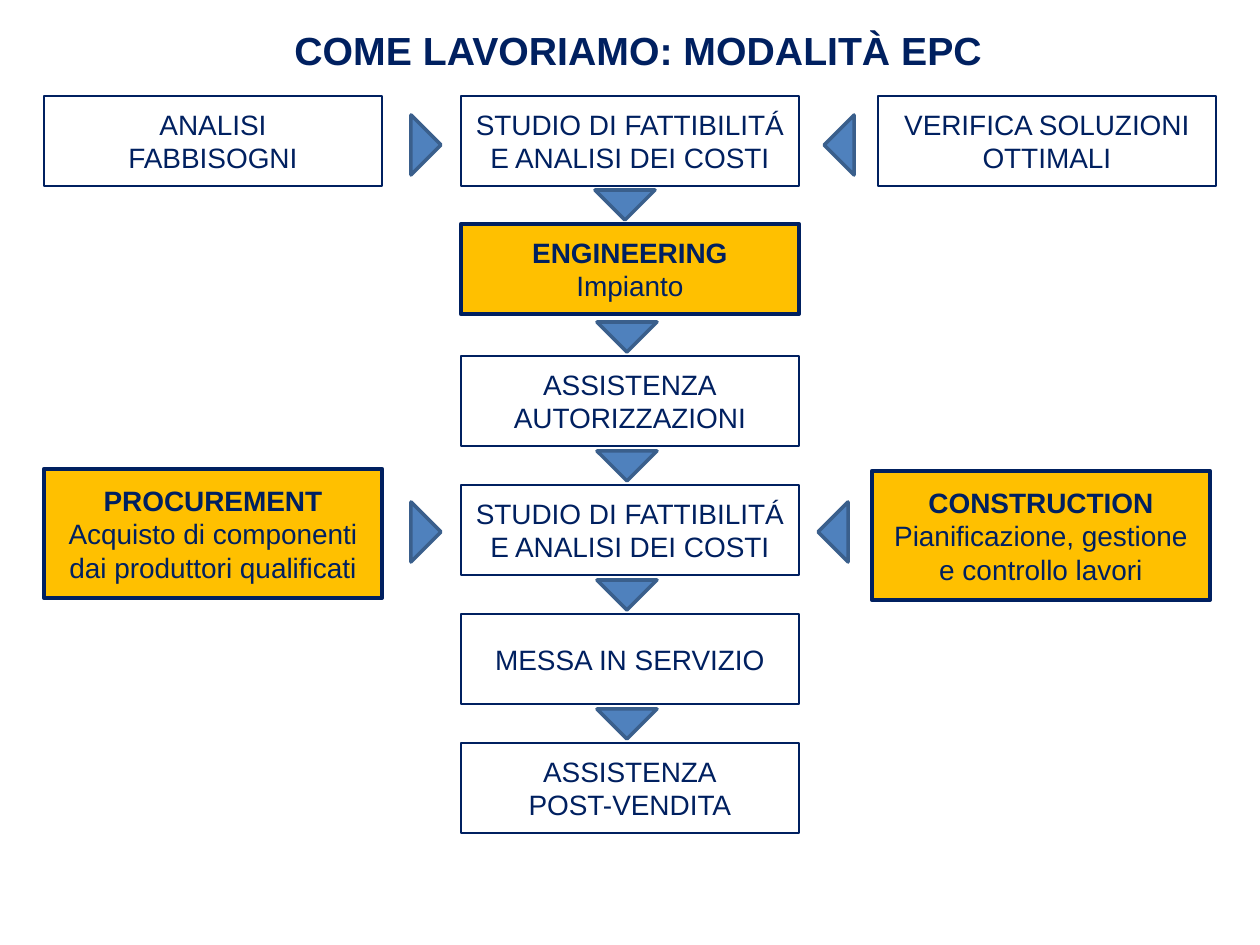
import dataclasses

import pptx
import pptx.dml.color
import pptx.enum.shapes
import pptx.enum.text
import pptx.util

PX = 914400 / 126
SHAPE = pptx.enum.shapes.MSO_SHAPE
ALIGN = pptx.enum.text.PP_ALIGN
ANCHOR = pptx.enum.text.MSO_ANCHOR


@dataclasses.dataclass(frozen=True)
class Theme:
    """Colours, type sizes and line widths of the slide."""
    navy: str = "002060"
    gold: str = "FFC000"
    arrow_fill: str = "4F81BD"
    arrow_line: str = "3A5F8C"
    font: str = "Arial"
    title_size: float = 22.4
    step_size: float = 16
    step_line: float = 1.5
    key_line: float = 2.5
    arrow_width: float = 2


THEME = Theme()


def emu(px):
    """Turn px into EMU."""
    return pptx.util.Emu(round(px * PX))


def rgb(colour):
    """Turn a hex string into a colour."""
    return pptx.dml.color.RGBColor.from_string(colour)


def write(frame, text, size, align=ALIGN.CENTER, anchor=ANCHOR.MIDDLE, bold_first=False):
    """Write each line of text as one paragraph."""
    frame.word_wrap = True
    frame.vertical_anchor = anchor
    for index, line in enumerate(text.split("\n")):
        paragraph = frame.add_paragraph() if index else frame.paragraphs[0]
        paragraph.alignment = align
        run = paragraph.add_run()
        run.text = line
        run.font.name = THEME.font
        run.font.size = pptx.util.Pt(size)
        run.font.bold = bold_first and index == 0
        run.font.color.rgb = rgb(THEME.navy)


def add_outlined(slide, kind, box, fill, line, width):
    """Add a preset shape with its fill and outline."""
    shape = slide.shapes.add_shape(kind, *map(emu, box))
    shape.shadow.inherit = False
    if fill:
        shape.fill.solid()
        shape.fill.fore_color.rgb = rgb(fill)
    else:
        shape.fill.background()
    shape.line.color.rgb = rgb(line)
    shape.line.width = pptx.util.Pt(width)
    return shape


def add_step(slide, box, text, key=False):
    """Add a process step, gold with a bold heading when it is a key phase."""
    step = add_outlined(slide, SHAPE.RECTANGLE, box, THEME.gold if key else None,
                        THEME.navy, THEME.key_line if key else THEME.step_line)
    write(step.text_frame, text, THEME.step_size, bold_first=key)


def add_arrow(slide, centre_x, centre_y, rotation):
    """Add a triangular arrow turned about its centre."""
    width, height = 60, 30
    box = (centre_x - width / 2, centre_y - height / 2, width, height)
    arrow = add_outlined(slide, SHAPE.ISOSCELES_TRIANGLE, box, THEME.arrow_fill,
                         THEME.arrow_line, THEME.arrow_width)
    arrow.rotation = rotation


def add_title(slide, box):
    """Add the slide title."""
    frame = slide.shapes.add_textbox(*map(emu, box)).text_frame
    frame.margin_top = emu(10)
    write(frame, "COME LAVORIAMO: MODALITÀ EPC", THEME.title_size,
          align=ALIGN.LEFT, anchor=ANCHOR.TOP, bold_first=True)


def add_main_flow(slide, box):
    """Add the central column of steps with an arrow above each later step."""
    left, top, width, _ = box
    height, pitch = 90, 129
    feasibility = "STUDIO DI FATTIBILITÁ E ANALISI DEI COSTI"
    add_step(slide, (left, top, width, height), feasibility)
    add_step(slide, (left, top + 128, width, height), "ENGINEERING\nImpianto", key=True)
    add_arrow(slide, left + 164, top + 109, 180)
    later_steps = ("ASSISTENZA\nAUTORIZZAZIONI", feasibility,
                   "MESSA IN SERVIZIO", "ASSISTENZA\nPOST-VENDITA")
    for index, text in enumerate(later_steps):
        step_top = top + 260 + index * pitch
        add_step(slide, (left, step_top, width, height), text)
        add_arrow(slide, left + 166, step_top - 19, 180)


def add_left_input(slide, box, text, arrow_y, key=False):
    """Add a step on the left that points right into the main flow."""
    left, top, width, _ = box
    add_step(slide, box, text, key)
    add_arrow(slide, left + width + 44, top + arrow_y, 90)


def add_right_input(slide, box, text, arrow_y, key=False):
    """Add a step on the right that points left into the main flow."""
    left, top, _, _ = box
    add_step(slide, box, text, key)
    add_arrow(slide, left - 39, top + arrow_y, 270)


def main():
    """Build the slide and save it."""
    deck = pptx.Presentation()
    deck.slide_width, deck.slide_height = emu(1260), emu(945)
    slide = deck.slides.add_slide(deck.slide_layouts[6])
    add_title(slide, (282, 16, 726, 79))
    add_main_flow(slide, (461, 96, 338, 737))
    add_left_input(slide, (44, 96, 338, 90), "ANALISI\nFABBISOGNI", 49)
    add_right_input(slide, (878, 96, 338, 90), "VERIFICA SOLUZIONI OTTIMALI", 49)
    add_left_input(slide, (44, 469, 338, 129),
                   "PROCUREMENT\nAcquisto di componenti\ndai produttori qualificati",
                   63, key=True)
    add_right_input(slide, (872, 471, 338, 129),
                    "CONSTRUCTION\nPianificazione, gestione\ne controllo lavori",
                    61, key=True)
    deck.save("out.pptx")


if __name__ == "__main__":
    main()
